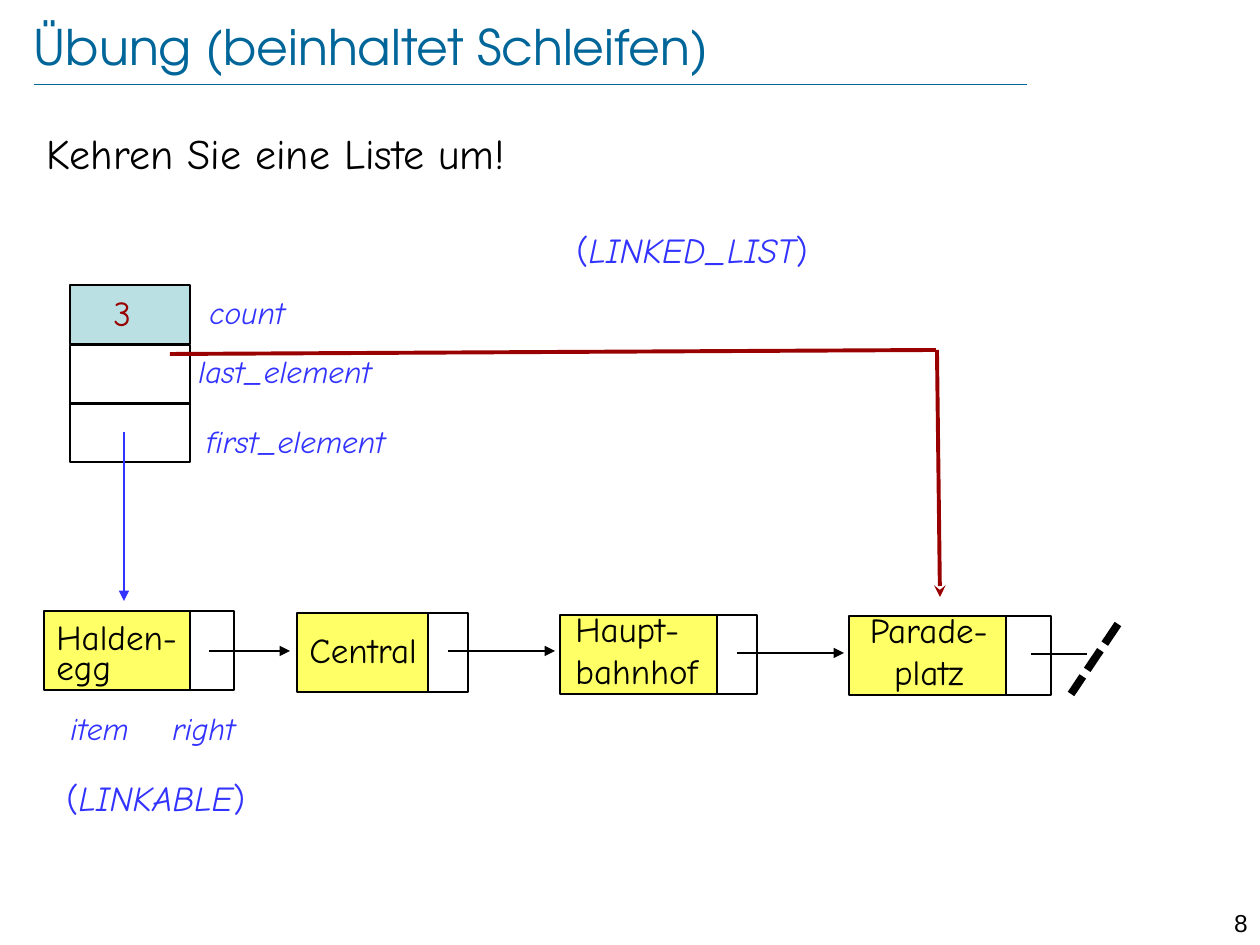
from lxml import etree
from pptx import Presentation
from pptx.dml.color import RGBColor
from pptx.enum.dml import MSO_LINE
from pptx.enum.shapes import MSO_CONNECTOR, MSO_SHAPE
from pptx.enum.text import MSO_ANCHOR, PP_ALIGN
from pptx.oxml.ns import qn
from pptx.util import Pt

PX = 914400 / 126
BLACK, BLUE, RED = "000000", "3333FF", "990000"
YELLOW, TEAL, TITLE = "FFFF66", "BBE0E3", "006699"
COMIC = "Comic Neue"


def emu(*lengths):
    return [round(n * PX) for n in lengths]


def color(hex_value):
    return RGBColor.from_string(hex_value)


prs = Presentation()
prs.slide_width, prs.slide_height = emu(1260, 945)
s = prs.slides.add_slide(prs.slide_layouts[6])

# Memory cells: three fields of the list, then item and right of each node
fields = [(70, y, 120, 59, fill) for y, fill in ((285, TEAL), (345, None), (403, None))]
nodes = [(44, 611, 146, 44), (297, 613, 131, 40), (560, 615, 157, 40), (849, 616, 157, 45)]
cells = list(fields)
for x, y, item_w, right_w in nodes:
    cells.append((x, y, item_w, 79, YELLOW))
    cells.append((x + item_w, y, right_w, 79, None))
for x, y, w, h, fill in cells:
    sp = s.shapes.add_shape(MSO_SHAPE.RECTANGLE, *emu(x, y, w, h))
    sp.shadow.inherit = False
    if fill:
        sp.fill.solid()
        sp.fill.fore_color.rgb = color(fill)
    else:
        sp.fill.background()
    sp.line.color.rgb = color(BLACK)
    sp.line.width = Pt(0.75)

# x, y, width, height, runs of (text, italic), size, colour, font, align, line spacing
L, C, R = PP_ALIGN.LEFT, PP_ALIGN.CENTER, PP_ALIGN.RIGHT
labels = [
    (1191, 902, 69, 30, [("8", False)], 14, BLACK, "Arial", R, 1),
    (34, 121, 1184, 70, [("Kehren Sie eine Liste um!", False)], 24, BLACK, COMIC, L, 1),
    (44, 621, 155, 72, [("Halden-egg", False)], 20, BLACK, COMIC, L, 0.7),
    (297, 622, 149, 54, [("Central", False)], 20, BLACK, COMIC, L, 1),
    (563, 601, 168, 97, [("Haupt-\nbahnhof", False)], 20, BLACK, COMIC, L, 1),
    (852, 602, 154, 97, [("Parade-\nplatz", False)], 20, BLACK, COMIC, C, 1),
    (101, 285, 129, 54, [("3", False)], 20, RED, COMIC, L, 1),
    (197, 287, 129, 50, [("count", True)], 18, BLUE, COMIC, L, 1),
    (186, 346, 348, 50, [("last_element", True)], 18, BLUE, COMIC, L, 1),
    (194, 416, 348, 50, [("first_element", True)], 18, BLUE, COMIC, L, 1),
    (58, 703, 100, 50, [("item", True)], 18, BLUE, COMIC, L, 1),
    (160, 703, 100, 50, [("right", True)], 18, BLUE, COMIC, L, 1),
    (54, 770, 260, 54, [("(", False), ("LINKABLE", True), (")", False)], 20, BLUE, COMIC, L, 1),
    (564, 222, 354, 54, [("(", False), ("LINKED_LIST", True), (")", False)], 20, BLUE, COMIC, L, 1),
    (34, 16, 1095, 60, [("Übung (beinhaltet Schleifen)", False)], 28, TITLE,
     "TeX Gyre Adventor", L, 1),
]
for x, y, w, h, runs, size, ink, font, align, spacing in labels:
    tf = s.shapes.add_textbox(*emu(x, y, w, h)).text_frame
    tf.word_wrap = True
    if ink == TITLE:
        tf.vertical_anchor = MSO_ANCHOR.MIDDLE
        tf.margin_left = tf.margin_right = tf.margin_top = tf.margin_bottom = 0
    p = tf.paragraphs[0]
    p.alignment = align
    p.line_spacing = spacing
    for text, italic in runs:
        for i, part in enumerate(text.split("\n")):
            if i:
                p.add_line_break()
            r = p.add_run()
            r.text = part
            r.font.name, r.font.size, r.font.italic = font, Pt(size), italic
            r.font.color.rgb = color(ink)

# from x, from y, to x, to y, colour, width, dash, arrowhead
lines = [
    (34, 84, 1027, 84, TITLE, 0.25, None, None),
    (209, 651, 290, 651, BLACK, 0.75, None, "triangle"),
    (448, 651, 555, 651, BLACK, 0.75, None, "triangle"),
    (737, 653, 844, 653, BLACK, 0.75, None, "triangle"),
    (1031, 654, 1087, 654, BLACK, 1.5, None, None),
    (1118, 624, 1071, 694, BLACK, 4.5, MSO_LINE.SQUARE_DOT, None),
    (124, 432, 124, 601, BLUE, 0.75, None, "triangle"),
    (170, 354, 936, 350, RED, 2.25, None, None),
    (937, 350, 940, 597, RED, 2.25, None, "stealth"),
]
for x1, y1, x2, y2, ink, width, dash, head in lines:
    ln = s.shapes.add_connector(MSO_CONNECTOR.STRAIGHT, *emu(x1, y1, x2, y2))
    ln.line.color.rgb = color(ink)
    ln.line.width = Pt(width)
    if dash:
        ln.line.dash_style = dash
    sp_pr = ln._element.spPr
    if head:
        etree.SubElement(sp_pr.find(qn("a:ln")), qn("a:tailEnd"), type=head)
    etree.SubElement(sp_pr, qn("a:effectLst"))

prs.save("out.pptx")
